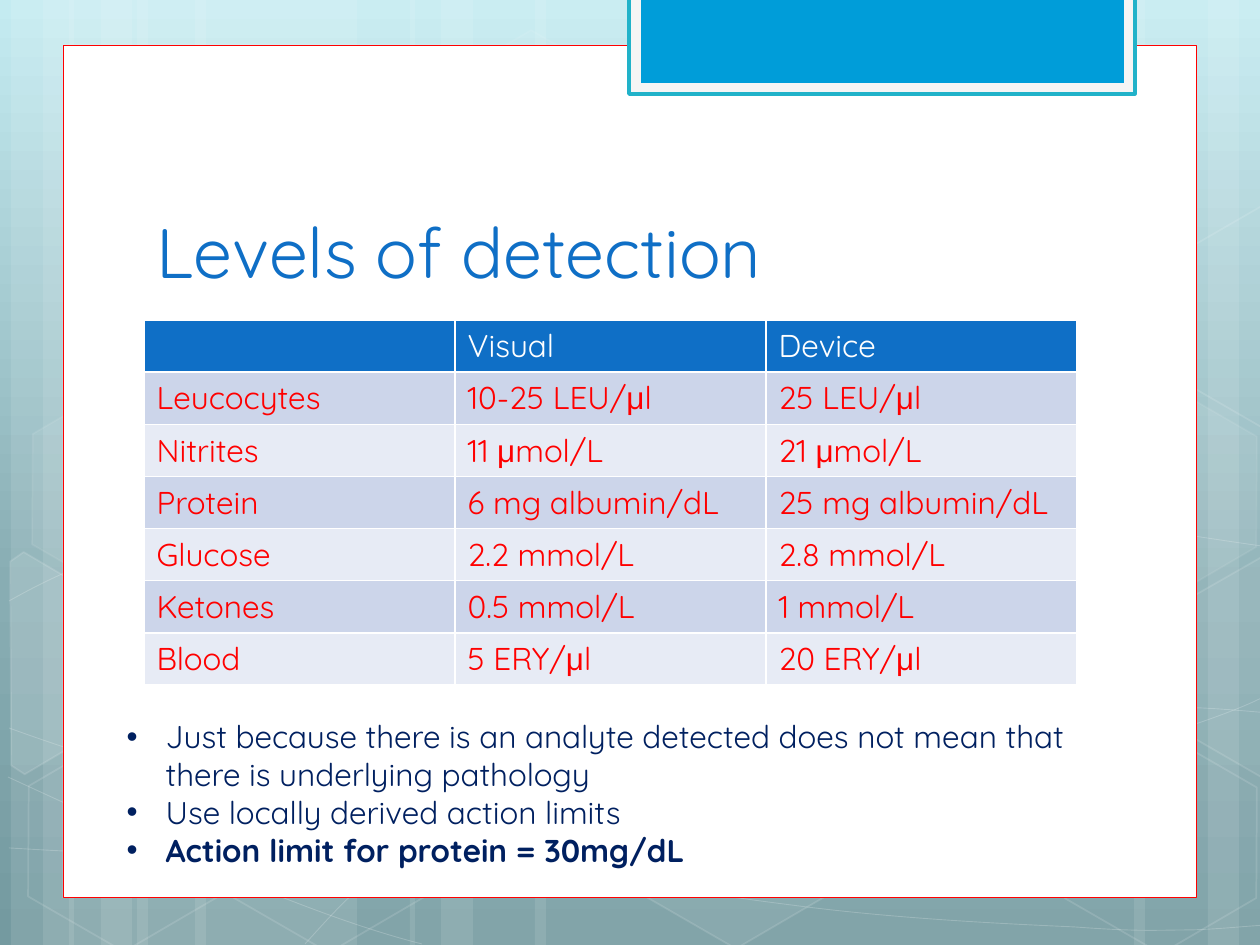
from copy import deepcopy
from math import cos, radians, sin

from lxml import etree
from pptx import Presentation
from pptx import util as u
from pptx.dml.color import RGBColor
from pptx.enum import shapes, text
from pptx.oxml.ns import qn

PX = u.Inches(1) / 126
FONT, SYMBOL_FONT = "Quicksand", "Arial"
TILT = 30

WHITE = RGBColor(0xFF, 0xFF, 0xFF)
RED = RGBColor(0xFF, 0x00, 0x00)
BLUE = RGBColor(0x0F, 0x6F, 0xC6)
NAVY = RGBColor(0x00, 0x20, 0x60)
TAB_FILL = RGBColor(0x00, 0x9D, 0xD9)
TAB_FRAME = RGBColor(0xF5, 0xF5, 0xF5)
TAB_LINE = RGBColor(0x21, 0xB2, 0xC9)
BANDS = [RGBColor(0xCC, 0xD5, 0xEA), RGBColor(0xE7, 0xEB, 0xF5)]
BACKGROUND = [(0, RGBColor(0xC4, 0xEB, 0xF1)),
              (0.62, RGBColor(0x88, 0xAD, 0xB3)),
              (1, RGBColor(0x74, 0x9A, 0xA0))]

# Content
TITLE = "Levels of detection"
LEVELS = [
    ("", "Visual", "Device"),
    ("Leucocytes", "10-25 LEU/μl", "25 LEU/μl"),
    ("Nitrites", "11 μmol/L", "21 μmol/L"),
    ("Protein", "6 mg albumin/dL", "25 mg albumin/dL"),
    ("Glucose", "2.2 mmol/L", "2.8 mmol/L"),
    ("Ketones", "0.5 mmol/L", "1 mmol/L"),
    ("Blood", "5 ERY/μl", "20 ERY/μl"),
]
NOTES = [
    ("Just because there is an analyte detected does not mean that "
     "there is underlying pathology", False),
    ("Use locally derived action limits", False),
    ("Action limit for protein = 30mg/dL", True),
]

# Backdrop: stripes (left, width), Bezier chains, hexagons (left, top, fill %, line %)
STRIPES = [(137, 220), (11, 63), (43, 105), (195, 220), (69, 63), (101, 105),
           (925, 220), (1208, 63), (1134, 105), (535, 390), (410, 63), (441, 105)]
CURVES = [
    [(9, 848), (77, 852), (145, 856), (239, 854), (334, 853), (451, 851), (577, 838),
     (703, 825), (882, 801), (998, 777), (1113, 753), (1231, 716), (1269, 694)],
    [(9, 601), (45, 581), (82, 562), (152, 543), (224, 524), (326, 499), (437, 488),
     (550, 479), (685, 478), (824, 488), (963, 498), (1193, 537), (1269, 547)],
    [(8, 777), (160, 847), (311, 916), (422, 944)],
    [(9, 728), (48, 742), (88, 756), (161, 776), (234, 795), (344, 827), (450, 848),
     (554, 869), (687, 892), (791, 905), (896, 919), (1008, 924), (1075, 927),
     (1142, 932), (1158, 930), (1191, 930), (1223, 929), (1246, 926), (1269, 925)],
    [(305, 944), (328, 919), (350, 893), (381, 871), (412, 847), (454, 823), (489, 805),
     (522, 788), (546, 780), (591, 767), (638, 754), (722, 737), (766, 728),
     (811, 719), (818, 719), (857, 717), (896, 713), (958, 709), (1000, 708),
     (1045, 707), (1116, 708), (1116, 708), (1144, 708), (1173, 708), (1201, 708),
     (1223, 709), (1245, 711), (1268, 713)],
]
HEXAGONS = [(421, 45, 4, 8), (626, 742, 6, 12), (14, 745, 0, 12), (18, 393, 7, 8),
            (219, 746, 0, 12), (949, 571, 10, 12), (1051, 747, 0, 12), (1051, 396, 7, 8)]
# Hexagons cut by the slide edge: corners, centre of turning, fill %
CUT_HEXAGONS = [
    ([(10, 561), (24, 552), (121, 609), (120, 718), (25, 774), (11, 765)], (45, 675), 10),
    ([(1167, 611), (1263, 556), (1271, 562), (1271, 772), (1263, 777), (1167, 722)],
     (1241, 655), 4),
    ([(1167, 261), (1263, 205), (1271, 211), (1271, 422), (1263, 427), (1167, 372)],
     (1241, 304), 0),
]


def px(*lengths):
    return [u.Emu(round(length * PX)) for length in lengths]


def write_text(paragraph, content, *, size=18, color=NAVY, bold=False):
    """Write content, giving each μ the symbol font."""
    for index, part in enumerate(content.split("μ")):
        for piece, font in (("μ" if index else "", SYMBOL_FONT), (part, FONT)):
            if piece:
                run = paragraph.add_run()
                run.text = piece
                run.font.name, run.font.size, run.font.bold = font, u.Pt(size), bold
                run.font.color.rgb = color


def style(shape, fill=None, line=None, width=1.0, fill_alpha=100, line_alpha=100):
    shape.shadow.inherit = False
    for target, color in ((shape.fill, fill), (shape.line.fill, line)):
        if color is None:
            target.background()
        else:
            target.solid()
            target.fore_color.rgb = color
    if line is not None:
        shape.line.width = u.Pt(width)
    for parent, alpha in (("p:spPr", fill_alpha), ("p:spPr/a:ln", line_alpha)):
        for color in shape.element.xpath(f"./{parent}/a:solidFill/a:srgbClr"):
            if alpha < 100:
                etree.SubElement(color, qn("a:alpha"), val=str(alpha * 1000))


def add_box(slide, kind, box, **format):
    shape = slide.shapes.add_shape(kind, *px(*box))
    style(shape, **format)
    return shape


def add_outline(slide, points, close, **format):
    builder = slide.shapes.build_freeform(*points[0], scale=PX)
    builder.add_line_segments(points[1:], close=close)
    shape = builder.convert_to_shape()
    style(shape, line=WHITE, **format)
    return shape


def bend(shape):
    """Make each three line segments one cubic Bezier segment."""
    lines = shape.element.xpath(".//a:lnTo")
    for start in range(0, len(lines), 3):
        curve = etree.Element(qn("a:cubicBezTo"))
        lines[start].addprevious(curve)
        for line in lines[start:start + 3]:
            curve.append(line[0])
            line.getparent().remove(line)


def turn_back(points, centre):
    """Undo the tilt of points around the centre."""
    cosine, sine = cos(radians(TILT)), sin(radians(TILT))
    offsets = [(x - centre[0], y - centre[1]) for x, y in points]
    return [(centre[0] + x * cosine + y * sine, centre[1] - x * sine + y * cosine)
            for x, y in offsets]


def place(shape, box):
    """Move a placeholder to its box, in front of the backdrop."""
    shape.left, shape.top, shape.width, shape.height = px(*box)
    shape.element.getparent().append(shape.element)
    shape.text_frame.auto_size = text.MSO_AUTO_SIZE.NONE
    shape.text_frame.word_wrap = True


def set_borders(cell):
    properties = cell._tc.get_or_add_tcPr()
    for index, side in enumerate("LRTB"):
        line = etree.Element(qn(f"a:ln{side}"), w=str(u.Pt(1)))
        fill = etree.SubElement(line, qn("a:solidFill"))
        etree.SubElement(fill, qn("a:srgbClr"), val=str(WHITE))
        properties.insert(index, line)


def draw_backdrop(slide):
    fill = slide.background.fill
    fill.gradient()
    fill.gradient_angle = 270
    first_stop = slide.element.xpath(".//a:gs")[0]
    first_stop.addnext(deepcopy(first_stop))
    for stop, (position, color) in zip(fill.gradient_stops, BACKGROUND):
        stop.position, stop.color.rgb = position, color

    rectangle = shapes.MSO_SHAPE.RECTANGLE
    for left, width in STRIPES:
        add_box(slide, rectangle, (left, 0, width, 945), fill=WHITE, fill_alpha=10)
    for chain in CURVES:
        bend(add_outline(slide, chain, False, width=0.5, line_alpha=20))
    for left, top, fill_alpha, line_alpha in HEXAGONS:
        hexagon = add_box(slide, shapes.MSO_SHAPE.HEXAGON, (left, top, 220, 192),
                          fill=WHITE if fill_alpha else None, line=WHITE,
                          fill_alpha=fill_alpha, line_alpha=line_alpha)
        hexagon.rotation = TILT
        hexagon.adjustments[0] = 0.285
    for points, centre, alpha in CUT_HEXAGONS:
        outline = add_outline(slide, turn_back(points, centre), True,
                              fill=WHITE if alpha else None, fill_alpha=alpha, line_alpha=12)
        outline.rotation = TILT

    # White page and the tab hanging over its top edge
    add_box(slide, rectangle, (63, 45, 1134, 853), fill=WHITE, line=RED, width=0.5)
    add_box(slide, rectangle, (629, -3, 506, 97), fill=TAB_FRAME, line=TAB_LINE, width=2)
    add_box(slide, rectangle, (641, -3, 483, 86), fill=TAB_FILL)


def draw_table(slide):
    rows, columns = len(LEVELS), len(LEVELS[0])
    table = slide.shapes.add_table(rows, columns, *px(144, 320, 311 * columns, 52 * rows)).table
    for r, row in enumerate(LEVELS):
        for c, content in enumerate(row):
            cell = table.cell(r, c)
            cell.fill.solid()
            cell.fill.fore_color.rgb = BANDS[(r - 1) % 2] if r else BLUE
            set_borders(cell)
            write_text(cell.text_frame.paragraphs[0], content, color=RED if r else WHITE)


def main():
    presentation = Presentation()
    presentation.slide_width, presentation.slide_height = px(1260, 945)
    slide = presentation.slides.add_slide(presentation.slide_layouts[1])
    draw_backdrop(slide)

    # Title
    title = slide.shapes.title
    place(title, (144, 141, 968, 158))
    title.text_frame.vertical_anchor = text.MSO_ANCHOR.BOTTOM
    paragraph = title.text_frame.paragraphs[0]
    paragraph.alignment = text.PP_ALIGN.LEFT
    write_text(paragraph, TITLE, size=40, color=BLUE)

    draw_table(slide)

    # Bulleted notes
    body = slide.placeholders[1]
    place(body, (114, 711, 993, 165))
    for index, (note, bold) in enumerate(NOTES):
        frame = body.text_frame
        paragraph = frame.add_paragraph() if index else frame.paragraphs[0]
        paragraph.space_before = u.Pt(0)
        properties = paragraph._p.get_or_add_pPr()
        indent = px(39)[0]
        properties.set("marL", str(indent))
        properties.set("indent", str(-indent))
        etree.SubElement(properties, qn("a:buFont"), typeface=SYMBOL_FONT)
        etree.SubElement(properties, qn("a:buChar"), char="•")
        write_text(paragraph, note, bold=bold)

    presentation.save("out.pptx")


if __name__ == "__main__":
    main()
